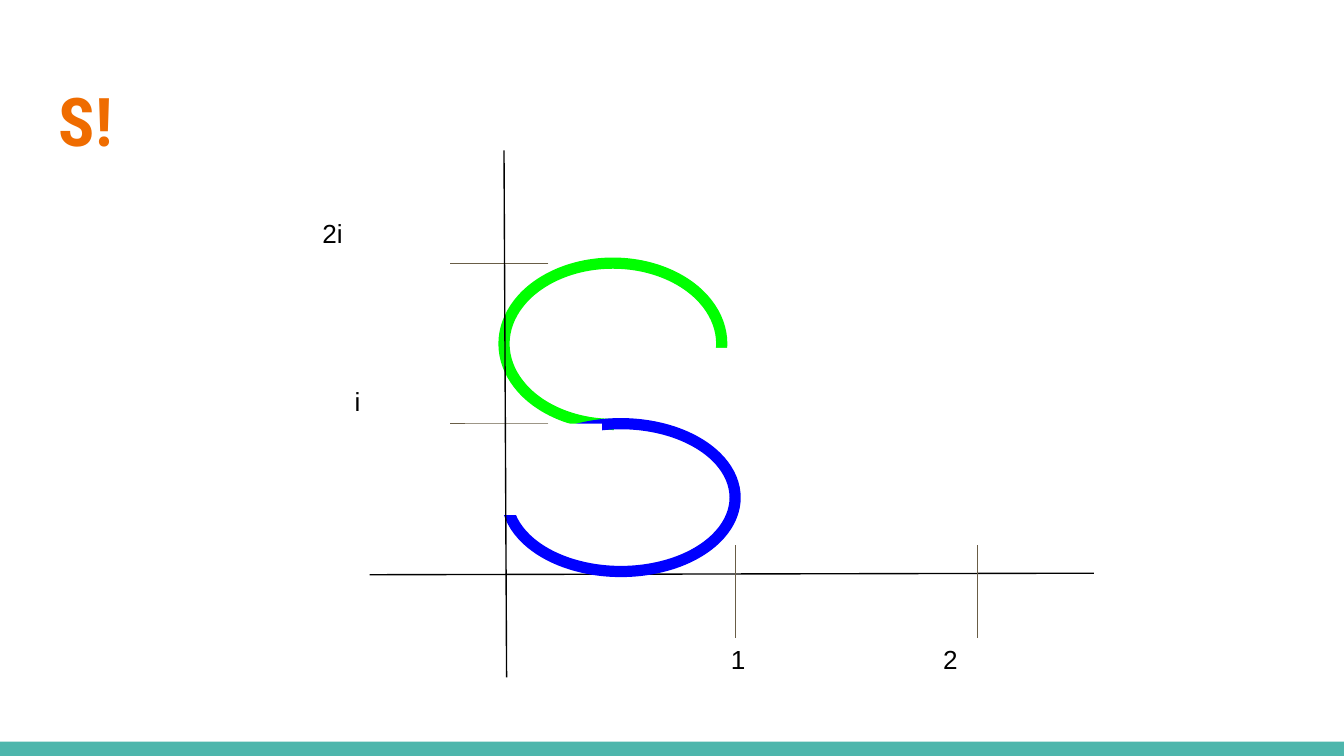
from pptx import Presentation
from pptx.util import Pt
from pptx.dml.color import RGBColor
from pptx.enum.shapes import MSO_CONNECTOR, MSO_SHAPE
from pptx.enum.text import MSO_ANCHOR
from lxml.etree import SubElement
from pptx.oxml.ns import qn

BLACK, WHITE, TICK = "000000", "FFFFFF", "695D46"
GREEN, BLUE, TEAL, ORANGE = "00FF00", "0000FF", "4DB6AC", "EF6C00"


def color(code):
    return RGBColor.from_string(code)


def pts(*values):
    return [Pt(v) for v in values]


def add_line(slide, start, end, code):
    line = slide.shapes.add_connector(
        MSO_CONNECTOR.STRAIGHT, *pts(*start, *end))
    line.line.color.rgb = color(code)
    line.line.width = Pt(0.75)
    SubElement(line._element.spPr, qn("a:effectLst"))


def add_block(slide, box, code):
    block = slide.shapes.add_shape(MSO_SHAPE.RECTANGLE, *pts(*box))
    block.shadow.inherit = False
    block.fill.solid()
    block.fill.fore_color.rgb = color(code)
    block.line.fill.background()


def add_ring(slide, box, code):
    ring = slide.shapes.add_shape(MSO_SHAPE.OVAL, *pts(*box))
    ring.shadow.inherit = False
    ring.fill.background()
    ring.line.color.rgb = color(code)
    ring.line.width = Pt(6)


def add_text(slide, box, text, size=14, font="Arial", code=BLACK, bold=False):
    frame = slide.shapes.add_textbox(*pts(*box)).text_frame
    frame.word_wrap = True
    frame.vertical_anchor = MSO_ANCHOR.TOP
    frame.margin_left = frame.margin_right = Pt(7.2)
    frame.margin_top = frame.margin_bottom = Pt(7.2)
    run = frame.paragraphs[0].add_run()
    run.text = text
    run.font.size = Pt(size)
    run.font.name = font
    run.font.bold = bold
    run.font.color.rgb = color(code)


def add_scale(slide, box):
    """Real axis with its ticks, and the ticks of the imaginary axis."""
    x, y, w, h = box
    base = y + 227
    add_line(slide, (x + w, base - 0.5), (x, base + 0.3), BLACK)
    for tick, left, text in ((196, 186.5, "1"), (325.6, 300.2, "2")):
        add_line(slide, (x + tick, base - 15.4), (x + tick, base + 34.3), TICK)
        add_text(slide, (x + left, base + 30, 78.5, 54), text)
    for tick, left, top, text in ((146.2, -15.1, 118.8, "i"),
                                  (60.5, -32.4, 28.8, "2i")):
        add_line(slide, (x + 95.8, y + tick), (x + 43.2, y + tick), TICK)
        add_text(slide, (x + left, y + top, 63, 34), text)


def add_curve(slide, box):
    """Two rings, each opened by a white block, form the letter S."""
    x, y, w, h = box
    add_ring(slide, (x, y, 116.64, 86.4), GREEN)
    add_block(slide, (x + 59, y + 45.4, 85, 49), WHITE)
    add_ring(slide, (x + 1.44, y + h - 79.2, w - 1.44, 79.2), BLUE)
    add_block(slide, (x - 20.9, y + 85.9, 73.4, 49), WHITE)


def main():
    deck = Presentation()
    deck.slide_width, deck.slide_height = pts(720, 405)
    slide = deck.slides.add_slide(deck.slide_layouts[6])
    add_block(slide, (0, 397.3, 720, 7.7), TEAL)
    add_text(slide, (24.5, 35.3, 671, 55.4), "S!", 36, "Roboto Condensed",
             ORANGE, True)
    add_scale(slide, (198, 80.6, 388, 282))
    add_curve(slide, (270, 141, 123.84, 165.2))
    add_line(slide, (270, 80.6), (271.4, 362.9), BLACK)
    deck.save("out.pptx")


if __name__ == "__main__":
    main()
